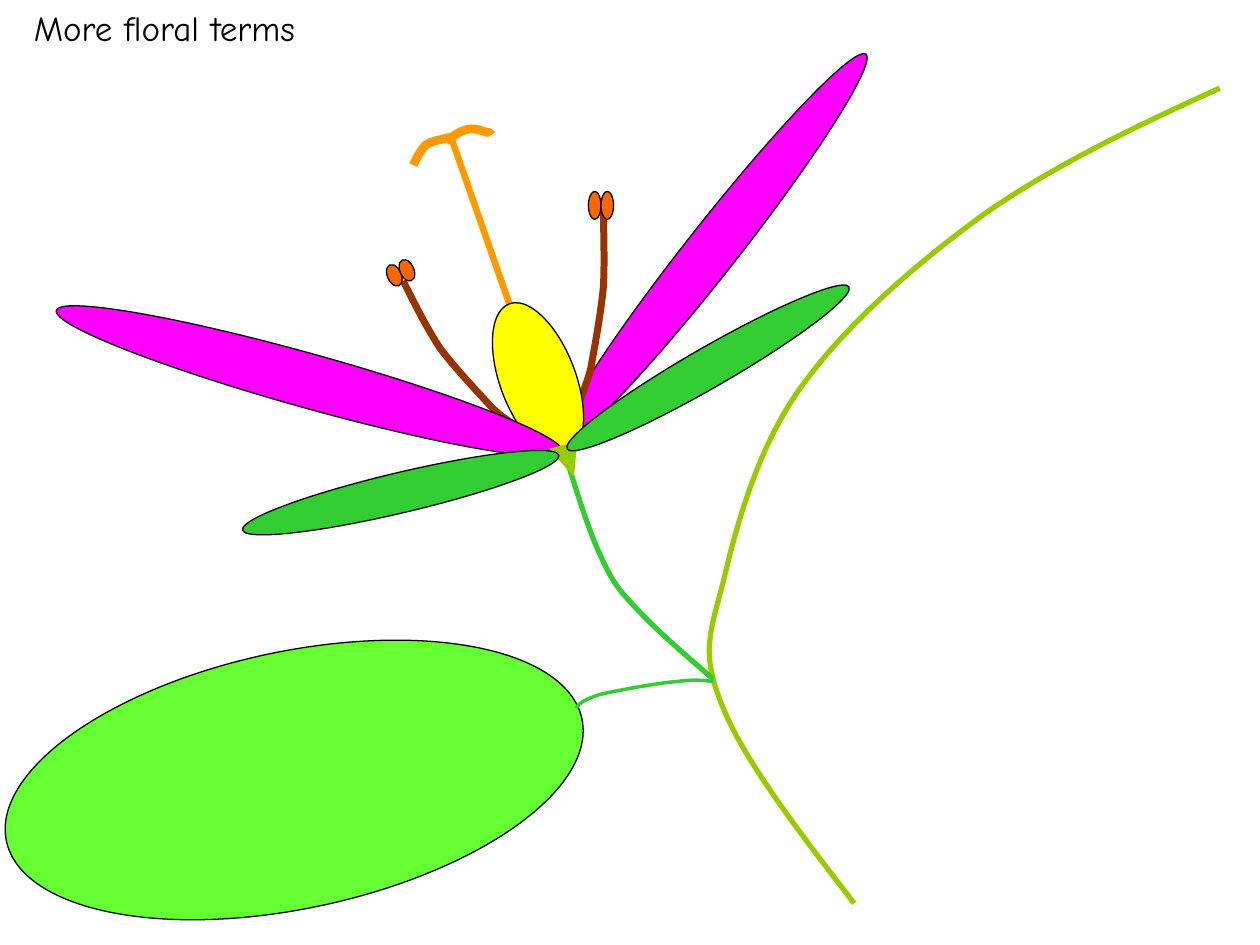
from pptx import Presentation
from pptx.dml.color import RGBColor
from pptx.enum.shapes import MSO_CONNECTOR, MSO_SHAPE
from pptx.enum.text import MSO_AUTO_SIZE
from pptx.oxml.ns import qn
from pptx.util import Inches, Pt
from lxml import etree

ELLIPSE, TRIANGLE = MSO_SHAPE.OVAL, MSO_SHAPE.ISOSCELES_TRIANGLE
STRAIGHT = MSO_CONNECTOR.STRAIGHT
FIT_TEXT = MSO_AUTO_SIZE.SHAPE_TO_FIT_TEXT

COLORS = {
    "outline": "000000", "petal": "FF00FF", "sepal": "33CC33",
    "stem": "99CC00", "stalk": "33CC33", "leaf": "66FF33",
    "ovary": "FFFF00", "style": "FF9900", "filament": "993300",
    "anther": "FF6600", "text": "000000",
}


def color(name):
    return RGBColor.from_string(COLORS[name])


def set_line(shape, name, width):
    shape.line.color.rgb = color(name)
    shape.line.width = Pt(width)


def add_part(shapes, box, at, fill, rotation=0, kind=ELLIPSE, outline="outline"):
    """Add a filled, rotated shape; at is left, top, width, height in the box."""
    x, y, w, h = at
    sp = shapes.add_shape(kind, Inches(box[0] + x), Inches(box[1] + y), Inches(w), Inches(h))
    sp.rotation = rotation
    sp.shadow.inherit = False
    sp.fill.solid()
    sp.fill.fore_color.rgb = color(fill)
    set_line(sp, outline, 0.75)
    return sp


def add_curve(shapes, box, points, name, width):
    """Add an open Bezier curve: a start point, then three points per segment."""
    pts = [(Inches(box[0] + x), Inches(box[1] + y)) for x, y in points]
    builder = shapes.build_freeform(*pts[0])
    builder.add_line_segments(pts[1:], close=False)
    sp = builder.convert_to_shape()
    path = next(sp._element.iter(qn("a:path")))
    segments = path.findall(qn("a:lnTo"))
    for i in range(0, len(segments), 3):
        bezier = etree.SubElement(path, qn("a:cubicBezTo"))
        for segment in segments[i:i + 3]:
            bezier.append(segment[0])
            path.remove(segment)
    sp.shadow.inherit = False
    sp.fill.background()
    set_line(sp, name, width)


def add_branch(shapes, box):
    """Main stem with the stalks of the leaf and the flower."""
    add_curve(shapes, box, [
        (2.78, 7.17), (2.34, 6.6), (1.91, 6.04), (1.74, 5.62),
        (1.56, 5.19), (1.63, 5.04), (1.74, 4.62),
        (1.84, 4.19), (2.01, 3.55), (2.36, 3.07),
        (2.71, 2.58), (3.26, 2.1), (3.81, 1.7),
        (4.37, 1.31), (5.02, 1), (5.68, 0.7)], "stem", 3)
    add_curve(shapes, box, [
        (1.66, 5.41), (1.59, 5.4), (1.51, 5.39), (1.37, 5.41),
        (1.22, 5.42), (0.9, 5.48), (0.77, 5.51),
        (0.64, 5.55), (0.6, 5.58), (0.57, 5.62)], "stalk", 2)
    add_curve(shapes, box, [
        (1.66, 5.39), (1.44, 5.2), (1.22, 5.01), (1.07, 4.85),
        (0.92, 4.69), (0.87, 4.64), (0.77, 4.42),
        (0.67, 4.21), (0.57, 3.88), (0.47, 3.56)], "stalk", 3)


def add_flower(shapes, box):
    add_part(shapes, box, (3.66, 1.79, 3.97, 0.4), "petal", 308.2)
    add_curve(shapes, box, [
        (4.59, 3.45), (4.58, 3.39), (4.57, 3.33), (4.59, 3.24),
        (4.6, 3.15), (4.65, 3.08), (4.69, 2.92),
        (4.72, 2.75), (4.77, 2.49), (4.79, 2.27),
        (4.8, 2.06), (4.79, 1.84), (4.79, 1.63)], "filament", 4)
    add_curve(shapes, box, [
        (4.25, 3.61), (4.23, 3.55), (4.21, 3.49), (4.16, 3.43),
        (4.1, 3.37), (4.01, 3.34), (3.9, 3.23),
        (3.79, 3.11), (3.61, 2.92), (3.49, 2.76),
        (3.38, 2.59), (3.29, 2.41), (3.2, 2.23)], "filament", 4)

    x, y = box
    style = shapes.add_connector(STRAIGHT, Inches(x + 4.07), Inches(y + 2.49),
                                 Inches(x + 3.58), Inches(y + 1.09))
    set_line(style, "style", 3.75)
    etree.SubElement(style._element.spPr, qn("a:effectLst"))

    add_part(shapes, box, (3.97, 2.37, 0.6, 1.29), "ovary", 339.3)
    add_part(shapes, box, (0.37, 2.81, 4.17, 0.43), "petal", 15.6)
    receptacle = add_part(shapes, box, (4.39, 3.51, 0.28, 0.19), "stem", 48.3, TRIANGLE, "stem")
    receptacle.adjustments[0] = 0.36
    for left, top, rotation in [(1.89, 3.75, 346.7), (4.33, 2.76, 330.1)]:
        add_part(shapes, box, (left, top, 2.58, 0.32), "sepal", rotation)

    for left, top in [(3.04, 2.13), (3.14, 2.09)]:
        add_part(shapes, box, (left, top, 0.18, 0.11), "anther", 246.1)
    for left in (4.67, 4.77):
        add_part(shapes, box, (left, 1.52, 0.1, 0.22), "anther")

    # Two lobes of the stigma
    add_curve(shapes, box, [
        (3.54, 1.12), (3.6, 1.08), (3.65, 1.04), (3.7, 1.03),
        (3.76, 1.01), (3.83, 1.04), (3.86, 1.05),
        (3.89, 1.05), (3.9, 1.06), (3.9, 1.07)], "style", 5)
    add_curve(shapes, box, [
        (3.28, 1.31), (3.31, 1.25), (3.34, 1.19), (3.38, 1.15),
        (3.42, 1.12), (3.49, 1.11), (3.53, 1.1),
        (3.56, 1.09), (3.57, 1.09), (3.58, 1.1)], "style", 5)


def add_title(shapes, box, text):
    tf = shapes.add_textbox(*map(Inches, box)).text_frame
    tf.word_wrap = False
    tf.auto_size = FIT_TEXT
    r = tf.paragraphs[0].add_run()
    r.text = text
    for name, value in {"name": "Comic Neue", "size": Pt(20)}.items():
        setattr(r.font, name, value)
    r.font.color.rgb = color("text")


def main():
    prs = Presentation()
    prs.slide_width, prs.slide_height = Inches(10), Inches(7.5)
    s = prs.slides.add_slide(prs.slide_layouts[6])
    plant = s.shapes.add_group_shape().shapes
    add_part(plant, (0, 5), (0, 0.17, 4.67, 2.04), "leaf", 348)
    add_branch(plant, (4, 0))
    add_flower(plant, (0, 0))
    add_title(s.shapes, (0.17, 0, 2.46, 0.44), "More floral terms")
    prs.save("out.pptx")


if __name__ == "__main__":
    main()
